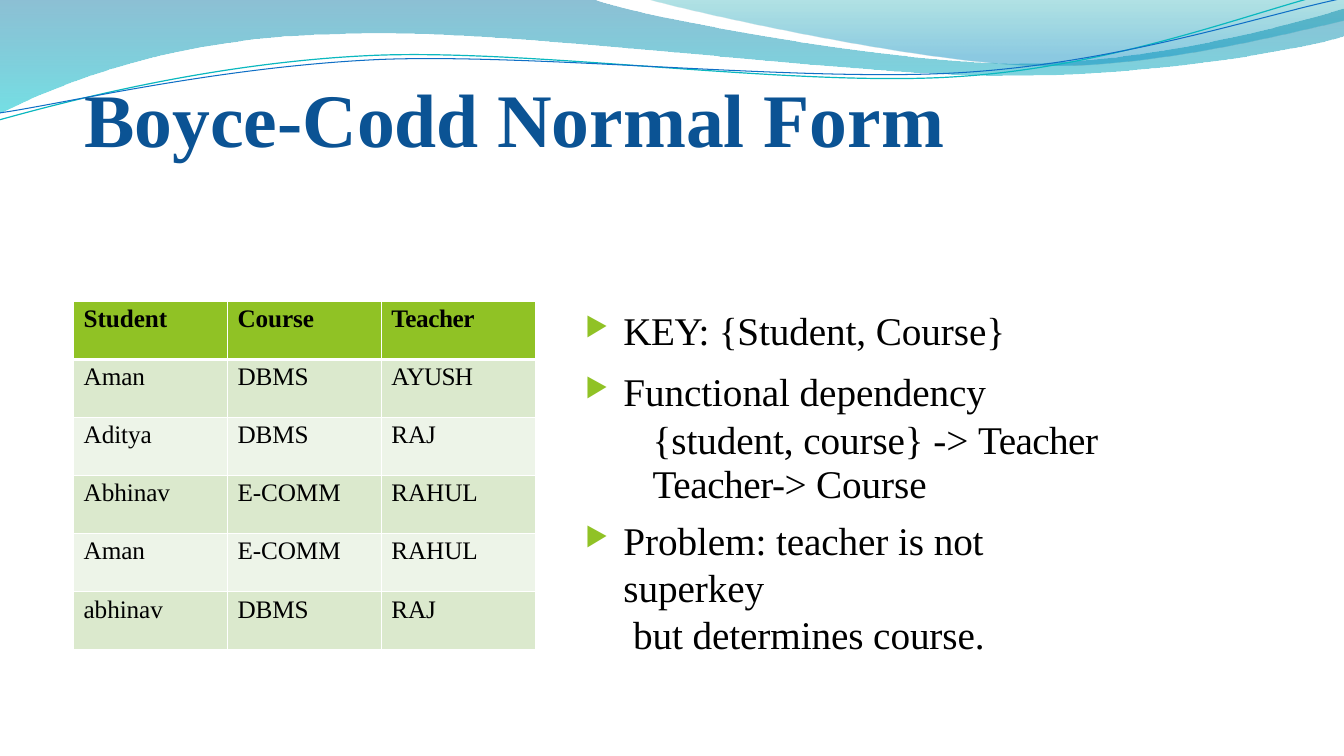
from dataclasses import dataclass
from typing import Any

from lxml.etree import SubElement
from pptx import Presentation
from pptx.dml.color import RGBColor
from pptx.enum.text import MSO_ANCHOR
from pptx.oxml import parse_xml
from pptx.oxml.ns import nsdecls, qn
from pptx.util import Inches, Pt

# The grid has square cells: 133.33 columns by 75 rows.
CELL = Inches(0.1)
COLUMNS, ROWS = 133.33, 75
FONT = "Times New Roman"
BLACK, WHITE, BLUE, GREEN = "000000", "FFFFFF", "0B5394", "90C225"
BANDS = ("DBE9CD", "EDF4E8")

Point = tuple[float, float]


@dataclass
class Stop:
    position: int
    color: str
    opacity: int


@dataclass
class Wave:
    """An outline from start; a segment has one point (line) or three (curve)."""
    start: Point
    segments: list[tuple[Point, ...]]
    stops: tuple[Stop, ...] = ()
    line: str = ""
    weight: float = 0


@dataclass
class Span:
    text: str
    spacing: float = -0.05


@dataclass
class Item:
    spans: list[Span]
    before: float
    margin: float = 3.9
    hanging: float = -3.8
    bullet: str = "▶"
    line_spacing: float = 0


WAVES = [
    Wave((-0.1, -0.1),
         [((58.7, -0.1),),
          ((63.4, 1.7), (88.5, 6.3), (101.1, 6.3)),
          ((113.8, 6.3), (127.8, 2.6), (133.3, 0.9)),
          ((133.5, 3.6),),
          ((131.1, 4.4), (116, 7.6), (99.4, 7.5)),
          ((82.9, 7.5), (50.9, 2.8), (34.3, 3.4)),
          ((17.2, 3.6), (6.1, 8.3), (-0.1, 11.3))],
         stops=(Stop(0, "0074A1", 45), Stop(100, "00C6CF", 55))),
    Wave((63.9, -0.1),
         [((67.9, 1.1), (90.9, 6.2), (102.5, 6.5)),
          ((114.1, 6.9), (128.2, 3.2), (133.3, 2.1)),
          ((133.3, 0),)],
         stops=(Stop(0, "00A1A9", 30), Stop(80, "008BBF", 45))),
    Wave((-0.1, 11.9),
         [((6.4, 10.1), (21.1, 6.2), (36.9, 5.5)),
          ((52.7, 4.8), (79, 8.7), (95, 7.6)),
          ((111, 6.6), (125.2, 0.8), (133.1, -1))],
         line="0AB8BF", weight=0.85),
    Wave((0, 11.2),
         [((6.3, 10.3), (21.8, 6.6), (37.8, 5.9)),
          ((53.7, 5.3), (79.6, 8.2), (95.5, 7.2)),
          ((111.5, 6.2), (125.5, 1.4), (133.4, -0.2))],
         line="0F6FC6", weight=0.75),
]

TABLE = [
    ("Student", "Course", "Teacher"),
    ("Aman", "DBMS", "AYUSH"),
    ("Aditya", "DBMS", "RAJ"),
    ("Abhinav", "E-COMM", "RAHUL"),
    ("Aman", "E-COMM", "RAHUL"),
    ("abhinav", "DBMS", "RAJ"),
]
TIGHT = {"Teacher": -0.3, "AYUSH": -0.5}

TITLE = Item([Span("Boyce-Codd Normal "), Span("Form", 0)], 1, 0.1, 0, "")
NOTES = [
    Item([Span("KEY: ", -0.4), Span("{Student, Course}")], 10.9),
    Item([Span("Functional dependency")], 9.9),
    Item([Span("{student, course} -> "), Span("Teacher ", -0.4),
          Span("Teacher-> ", -0.3), Span("Course")], 2.6, 6.8, 0, "", 31.7),
    Item([Span("Problem: teacher is not superkey\v but determines course.")], 6.8),
]


def grid(cells: float) -> int:
    return round(cells * CELL)


def rgb(color: str) -> RGBColor:
    return RGBColor.from_string(color)


def assign(target: Any, values: dict[str, Any]) -> None:
    for name, value in values.items():
        setattr(target, name, value)


def bend(shape: Any, segments: list[tuple[Point, ...]]) -> None:
    """Join the straight steps of each three-point segment into one curve."""
    steps = iter(list(shape._element.iter(qn("a:lnTo"))))
    for segment in segments:
        first, *others = [next(steps) for _ in segment]
        for step in others:
            first.append(step[0])
            step.getparent().remove(step)
        if others:
            first.tag = qn("a:cubicBezTo")


def draw_wave(page: Any, wave: Wave) -> None:
    builder = page.shapes.build_freeform(*map(grid, wave.start))
    points = [(grid(x), grid(y)) for segment in wave.segments for x, y in segment]
    builder.add_line_segments(points, close=bool(wave.stops))
    shape = builder.convert_to_shape()
    bend(shape, wave.segments)
    shape.shadow.inherit = False
    if not wave.stops:
        shape.fill.background()
        shape.line.color.rgb = rgb(wave.line)
        shape.line.width = Pt(wave.weight)
        return
    shape.line.fill.background()
    shape.fill.gradient()
    shape.fill.gradient_angle = 270
    for stop, drawn in zip(wave.stops, shape.fill.gradient_stops):
        drawn.color.rgb = rgb(stop.color)
    for stop, node in zip(wave.stops, shape._element.iter(qn("a:gs"))):
        node.set("pos", str(stop.position * 1000))
        SubElement(node[0], qn("a:alpha"), val=str(stop.opacity * 1000))


def write(para: Any, item: Item, size: float, color: str, bold: bool = False) -> None:
    para.space_before = Pt(item.before)
    if item.line_spacing:
        para.line_spacing = Pt(item.line_spacing)
    properties = para._p.get_or_add_pPr()
    properties.set("marL", str(grid(item.margin)))
    properties.set("indent", str(grid(item.hanging)))
    if item.bullet:
        bullet_color = SubElement(properties, qn("a:buClr"))
        SubElement(bullet_color, qn("a:srgbClr"), val=GREEN)
        SubElement(properties, qn("a:buSzPct"), val="67000")
        SubElement(properties, qn("a:buChar"), char=item.bullet)
    for span in item.spans:
        for index, text in enumerate(span.text.split("\v")):
            if index:
                para.add_line_break()
            run = para.add_run()
            run.text = text
            assign(run.font, {"name": FONT, "size": Pt(size), "bold": bold})
            run.font.color.rgb = rgb(color)
            run.font._element.set("spc", str(round(span.spacing * 100)))


def draw_text(page: Any, at: tuple[float, ...], items: list[Item], top: float,
              anchor: Any, size: float, color: str, bold: bool = False) -> None:
    frame = page.shapes.add_textbox(*map(grid, at)).text_frame
    assign(frame, {"word_wrap": True, "vertical_anchor": anchor, "margin_left": 0,
                   "margin_right": 0, "margin_top": grid(top), "margin_bottom": 0})
    for index, item in enumerate(items):
        para = frame.add_paragraph() if index else frame.paragraphs[0]
        write(para, item, size, color, bold)


def add_borders(cell: Any, row: int) -> None:
    """White edges, thicker between the header and the body."""
    widths = {"L": 1, "R": 1, "T": 3 if row == 1 else 1, "B": 3 if row == 0 else 1}
    properties = cell._tc.get_or_add_tcPr()
    for index, (side, width) in enumerate(widths.items()):
        properties.insert(index, parse_xml(
            f'<a:ln{side} {nsdecls("a")} w="{Pt(width)}"><a:solidFill>'
            f'<a:srgbClr val="{WHITE}"/></a:solidFill></a:ln{side}>'))


def draw_table(page: Any, at: tuple[float, ...]) -> None:
    table = page.shapes.add_table(len(TABLE), len(TABLE[0]), *map(grid, at)).table
    for row, words in enumerate(TABLE):
        for column, word in enumerate(words):
            cell = table.cell(row, column)
            assign(cell, {"margin_left": 0, "margin_right": 0,
                          "margin_top": grid(0.4), "margin_bottom": 0})
            cell.fill.solid()
            cell.fill.fore_color.rgb = rgb(BANDS[(row - 1) % 2] if row else GREEN)
            add_borders(cell, row)
            item = Item([Span(word, TIGHT.get(word, -0.05))], 3.1 + row % 2 / 10, 1, 0, "")
            write(cell.text_frame.paragraphs[0], item, 18, BLACK, row == 0)


def main() -> None:
    deck = Presentation()
    assign(deck, {"slide_width": grid(COLUMNS), "slide_height": grid(ROWS)})
    page = deck.slides.add_slide(deck.slide_layouts[6])
    for wave in WAVES:
        draw_wave(page, wave)
    draw_text(page, (8.3, 6.9, 96.7, 9.2), [TITLE], 0.1, MSO_ANCHOR.BOTTOM, 54, BLUE, True)
    draw_table(page, (7.3, 29.9, 45.8, 34.55))
    draw_text(page, (57.95, 28.9, 54.5, 32.2), NOTES, 1.5, MSO_ANCHOR.TOP, 28, BLACK)
    deck.save("out.pptx")


if __name__ == "__main__":
    main()
